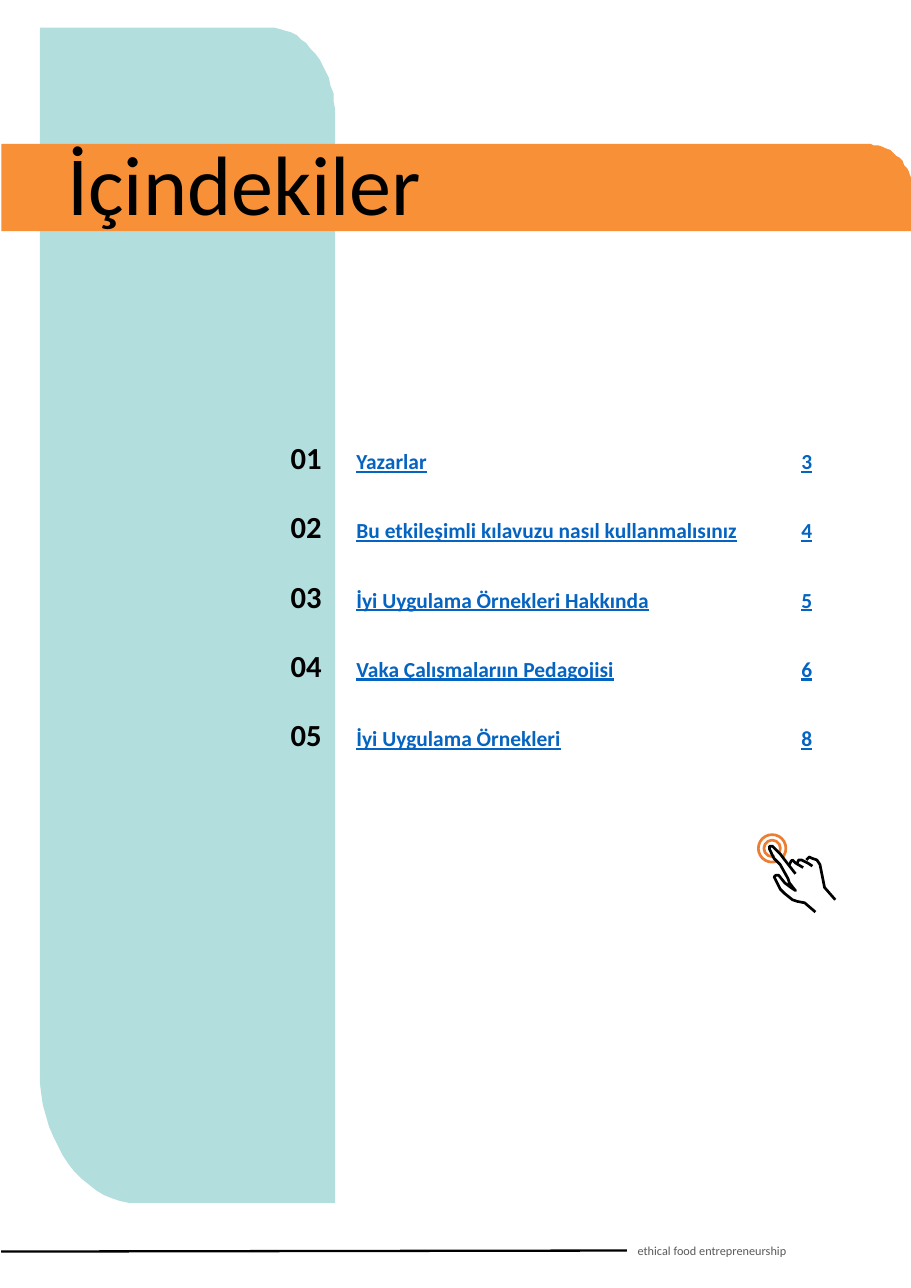
"""Builds the contents page of a Turkish good-practice guide."""
import math

import pptx
import pptx.dml.color
import pptx.enum.shapes
import pptx.enum.text
import pptx.util
from lxml import etree

Pt = pptx.util.Pt
RGBColor = pptx.dml.color.RGBColor
MSO_SHAPE = pptx.enum.shapes.MSO_SHAPE
MSO_ANCHOR = pptx.enum.text.MSO_ANCHOR

TEAL = RGBColor(0xB2, 0xDE, 0xDD)
ORANGE = RGBColor(0xF7, 0x90, 0x37)
RING_ORANGE = RGBColor(0xED, 0x7D, 0x31)
LINK_BLUE = RGBColor(0x05, 0x63, 0xC1)
GREY = RGBColor(0x59, 0x59, 0x59)
BLACK = RGBColor(0, 0, 0)
FONT = "Calibri"
DRAWING_NS = "http://schemas.openxmlformats.org/drawingml/2006/main"

ENTRIES = [
    ("01", "Yazarlar", "3"),
    ("02", "Bu etkileşimli kılavuzu nasıl kullanmalısınız", "4"),
    ("03", "İyi Uygulama Örnekleri Hakkında", "5"),
    ("04", "Vaka Çalışmalarıın Pedagojisi", "6"),
    ("05", "İyi Uygulama Örnekleri", "8"),
]
HAND_STROKES = [
    [(532.8, 596.2), (525.6, 589.7), (521.3, 589), (517.7, 587.5), (512.6, 583.9),
     (510.5, 581), (506.9, 574.6), (506.2, 572.6), (507.4, 571.5), (509, 571.9),
     (513.4, 576.7), (517, 580.3), (519.8, 582.5), (516.2, 576.7), (514.8, 573.8),
     (509.8, 565.2), (506.2, 560.9), (503.3, 555.1), (503.3, 553.3), (504.7, 552.8),
     (506.5, 553.9), (509.8, 558), (513.4, 562.3), (519.8, 571)],
    [(515.5, 565.2), (516.6, 562.8), (518.4, 562.5), (520.2, 563.6), (524.9, 567.2)],
    [(521.3, 564.2), (522, 562), (524.2, 561.6), (527.8, 563.8), (531.4, 566.5)],
    [(527, 561.8), (529.2, 560.5), (531.4, 561), (533.5, 562.3), (535.7, 564.6),
     (537.1, 570.2), (538.6, 579.6), (546.5, 587.5)],
]


def rounded_corner(center_x, center_y, radius_x, radius_y, start):
    angles = [math.radians(start + step * 5) for step in range(19)]
    return [(center_x + radius_x * math.cos(a), center_y + radius_y * math.sin(a))
            for a in angles]


def add_outline(shapes, points, closed):
    builder = shapes.build_freeform(*points[0], scale=float(Pt(1)))
    builder.add_line_segments(points[1:], close=closed)
    outline = builder.convert_to_shape()
    outline.shadow.inherit = False
    return outline


prs = pptx.Presentation()
prs.slide_width = Pt(595.44)
prs.slide_height = Pt(841.68)
slide = prs.slides.add_slide(prs.slide_layouts[5])
shapes = slide.shapes
heading = shapes.title

footer = shapes.add_textbox(Pt(409.7), Pt(802.8), Pt(134.6), Pt(28.8)).text_frame
footer.word_wrap = True
footer.vertical_anchor = MSO_ANCHOR.MIDDLE
footer_run = footer.paragraphs[0].add_run()
footer_run.text = "ethical food entrepreneurship"
footer_run.font.name = FONT
footer_run.font.size = Pt(8)
footer_run.font.color.rgb = GREY

footer_rule = shapes.add_connector(
    pptx.enum.shapes.MSO_CONNECTOR.STRAIGHT, Pt(0.7), Pt(817.9), Pt(409.7), Pt(817.2))
footer_rule.line.color.rgb = BLACK
footer_rule.line.width = Pt(1.5)
etree.SubElement(footer_rule.element.spPr, f"{{{DRAWING_NS}}}effectLst")

panel = ([(26, 18)] + rounded_corner(175, 76, 44, 58, -90)
         + [(219, 786)] + rounded_corner(90, 700, 64, 86, 90))
bar = [(1.4, 151.2), (1.4, 94.3)] + rounded_corner(566, 125.3, 31, 31, -90) + [(597, 151.2)]
for points, color in ((panel, TEAL), (bar, ORANGE)):
    band = add_outline(shapes, points, True)
    band.fill.solid()
    band.fill.fore_color.rgb = color
    band.line.fill.background()

heading.element.getparent().append(heading.element)
heading.left, heading.top, heading.width, heading.height = Pt(36.7), Pt(90), Pt(536.4), Pt(84.2)
heading.text_frame.auto_size = pptx.enum.text.MSO_AUTO_SIZE.NONE
heading.text_frame.vertical_anchor = MSO_ANCHOR.TOP
heading_line = heading.text_frame.paragraphs[0]
heading_line.alignment = pptx.enum.text.PP_ALIGN.LEFT
heading_line.line_spacing = 0.9
heading_run = heading_line.add_run()
heading_run.text = "İçindekiler"
heading_run.font.name = FONT
heading_run.font.size = Pt(55)
heading_run.font.color.rgb = BLACK

contents = shapes.add_textbox(Pt(182.9), Pt(283.4), Pt(388.8), Pt(216)).text_frame
contents.word_wrap = True
for index, (number, chapter, page) in enumerate(ENTRIES):
    entry = contents.add_paragraph() if index else contents.paragraphs[0]
    tab_list = etree.SubElement(entry._p.get_or_add_pPr(), f"{{{DRAWING_NS}}}tabLst")
    for position, align in ((43, "l"), (341, "r")):
        etree.SubElement(tab_list, f"{{{DRAWING_NS}}}tab", pos=str(Pt(position)), algn=align)
    if index:
        entry.space_before = Pt(21.2)
    for text, size, color, underlined in (
            (number + "\t", 20, BLACK, False), (chapter, 14, LINK_BLUE, True),
            ("\t", 14, LINK_BLUE, False), (page, 14, LINK_BLUE, True)):
        run = entry.add_run()
        run.text = text
        run.font.name = FONT
        run.font.size = Pt(size)
        run.font.bold = True
        run.font.underline = underlined
        run.font.color.rgb = color

for radius in (9, 5.4):
    ring = shapes.add_shape(MSO_SHAPE.ARC, Pt(504.7 - radius), Pt(554.4 - radius),
                            Pt(2 * radius), Pt(2 * radius))
    ring.adjustments[0] = 72 * 0.6
    ring.adjustments[1] = 40 * 0.6
    ring.shadow.inherit = False
    ring.fill.background()
    ring.line.color.rgb = RING_ORANGE
    ring.line.width = Pt(1.75)

for points in HAND_STROKES:
    stroke = add_outline(shapes, points, False)
    stroke.fill.background()
    stroke.line.color.rgb = BLACK
    stroke.line.width = Pt(1.75)

prs.save("out.pptx")
